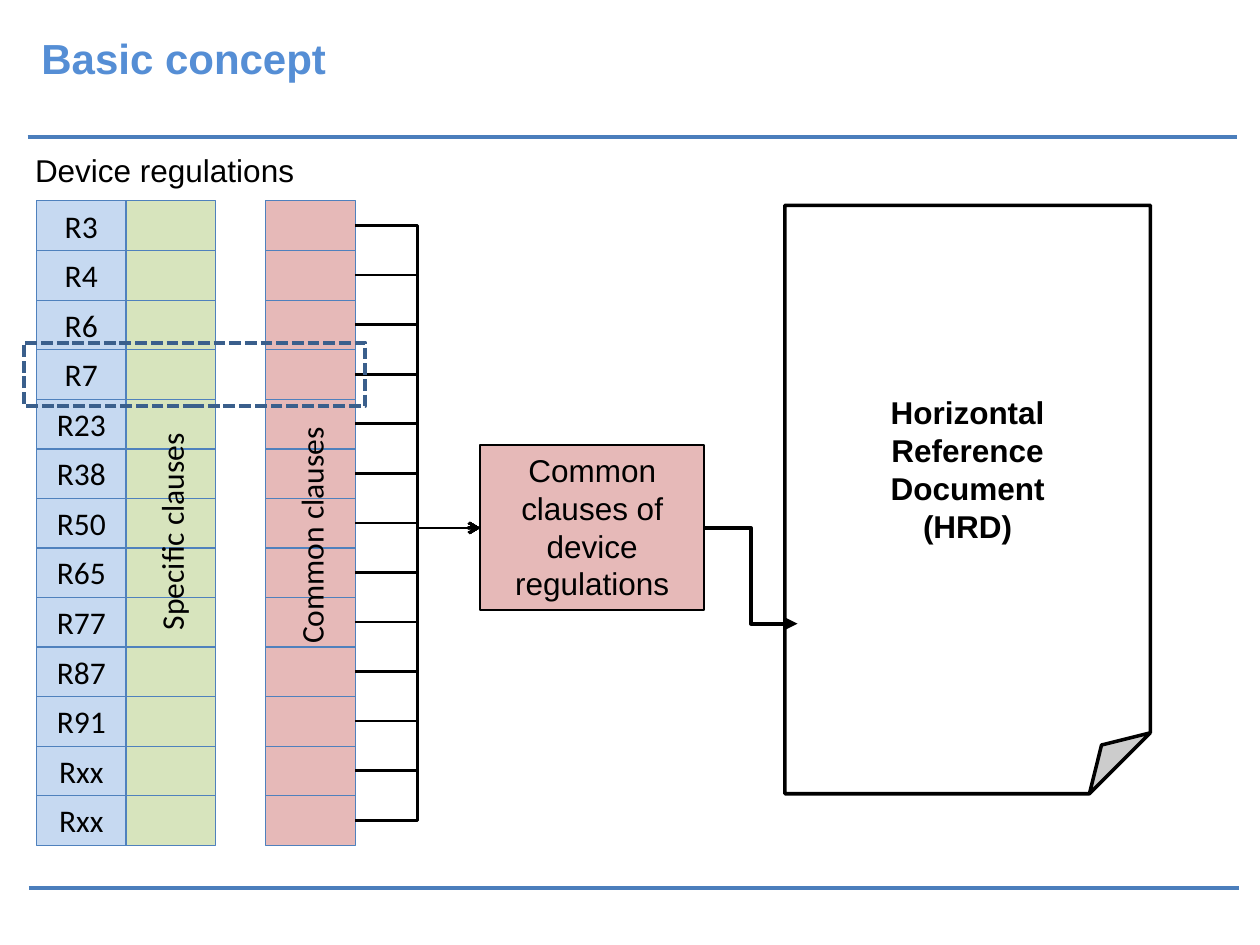
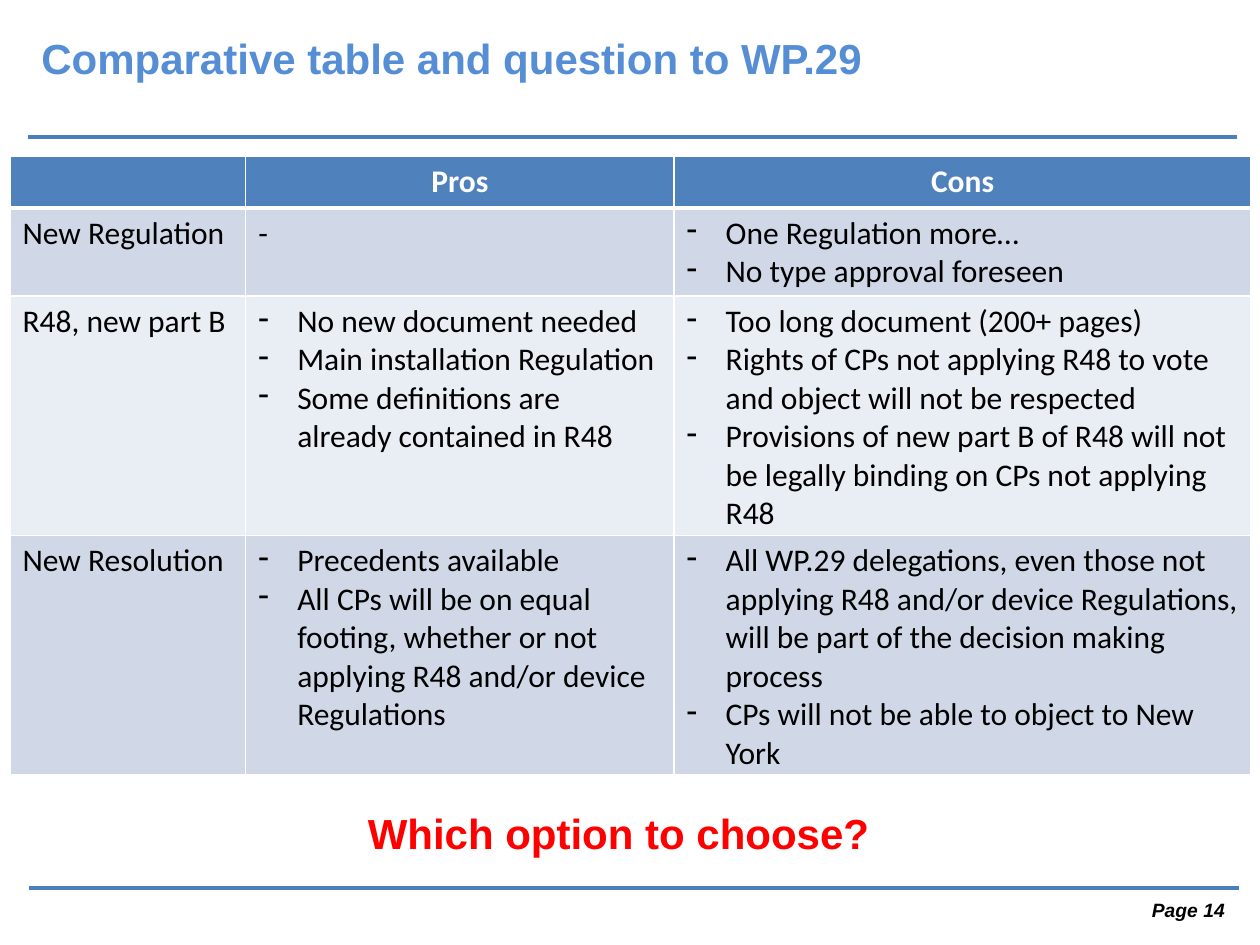
from lxml import etree
from pptx import Presentation
from pptx.dml.color import RGBColor
from pptx.enum.dml import MSO_LINE
from pptx.enum.shapes import MSO_CONNECTOR, MSO_SHAPE
from pptx.enum.text import MSO_ANCHOR, PP_ALIGN
from pptx.oxml.ns import qn
from pptx.util import Inches, Pt

RECT, FOLDED = MSO_SHAPE.RECTANGLE, MSO_SHAPE.FOLDED_CORNER
STRAIGHT, ELBOW = MSO_CONNECTOR.STRAIGHT, MSO_CONNECTOR.ELBOW
TOP, MIDDLE = MSO_ANCHOR.TOP, MSO_ANCHOR.MIDDLE
LEFT, CENTER, RIGHT = PP_ALIGN.LEFT, PP_ALIGN.CENTER, PP_ALIGN.RIGHT
DASH = MSO_LINE.SQUARE_DOT

BLACK = RGBColor(0x00, 0x00, 0x00)
WHITE = RGBColor(0xFF, 0xFF, 0xFF)
RED = RGBColor(0xFF, 0x00, 0x00)
TITLE_BLUE = RGBColor(0x55, 0x8E, 0xD5)
RULE_BLUE = RGBColor(0x4B, 0x7E, 0xBC)
ACCENT = RGBColor(0x4F, 0x81, 0xBD)
DASH_BLUE = RGBColor(0x3A, 0x5F, 0x8C)
PALE_BLUE = RGBColor(0xC6, 0xD9, 0xF1)
PALE_GREEN = RGBColor(0xD7, 0xE4, 0xBD)
PALE_RED = RGBColor(0xE6, 0xB9, 0xB8)
BAND_DARK = RGBColor(0xD0, 0xD8, 0xE8)
BAND_LIGHT = RGBColor(0xE9, 0xED, 0xF4)

# Content
REGULATIONS = ["R3", "R4", "R6", "R7", "R23", "R38", "R50", "R65", "R77",
               "R87", "R91", "Rxx", "Rxx"]
# left edge, fill, cell texts
CLAUSE_COLUMNS = [
    (0.29, PALE_BLUE, REGULATIONS),
    (1.0, PALE_GREEN, [""] * len(REGULATIONS)),
    (2.11, PALE_RED, [""] * len(REGULATIONS)),
]
# text, left, top
VERTICAL_LABELS = [("Common clauses", 0.18, 4.05),
                   ("Specific clauses", -0.93, 4.02)]
HRD_LINES = ["Horizontal", "Reference", "Document", "(HRD)"]

# A list in a cell is bulleted, a string is plain
OPTIONS = [
    ("", "Pros", "Cons"),
    ("New Regulation", "-",
     ["One Regulation more…", "No type approval foreseen"]),
    ("R48, new part B",
     ["No new document needed",
      "Main installation Regulation",
      "Some definitions are already contained in R48"],
     ["Too long document (200+ pages)",
      "Rights of CPs not applying R48 to vote and object will not be respected",
      "Provisions of new part B of R48 will not be legally binding on CPs "
      "not applying R48"]),
    ("New Resolution",
     ["Precedents available",
      "All CPs will be on equal footing, whether or not applying R48 and/or "
      "device Regulations"],
     ["All WP.29 delegations, even those not applying R48 and/or device "
      "Regulations, will be part of the decision making process",
      "CPs will not be able to object to New York"]),
]
COLUMN_WIDTHS = [1.87, 3.4, 4.58]
ROW_HEIGHTS = [0.41, 0.69, 1.9, 1.9]

# Layout
CELL_W, CELL_H = 0.71, 0.4
ROWS_TOP, ROW_PITCH = 1.59, 4.72 / 12
COMMON_BOX = (3.81, 3.53, 1.78, 1.31)
COMMON_MID = 4.19


def write(tf, lines, size=18, font="Calibri", color=BLACK, bold=False,
          italic=False, align=LEFT):
    tf.word_wrap = True
    tf.text = "\n".join(lines)
    for p in tf.paragraphs:
        p.alignment = align
        for r in p.runs:
            r.font.size, r.font.name = Pt(size), font
            r.font.bold, r.font.italic = bold, italic
            r.font.color.rgb = color


def add_text(s, box, text, **style):
    sp = s.shapes.add_textbox(*map(Inches, box))
    write(sp.text_frame, [text], **style)
    return sp


def add_box(s, box, fill, line, width, kind=RECT):
    sp = s.shapes.add_shape(kind, *map(Inches, box))
    sp.shadow.inherit = False
    if fill is None:
        sp.fill.background()
    else:
        sp.fill.solid()
        sp.fill.fore_color.rgb = fill
    sp.line.color.rgb = line
    sp.line.width = Pt(width)
    sp.text_frame.vertical_anchor = TOP
    return sp


def add_line(s, start, end, color, width, kind=STRAIGHT, head=None):
    cx = s.shapes.add_connector(kind, *map(Inches, start + end))
    cx.line.color.rgb = color
    cx.line.width = Pt(width)
    if head:
        etree.SubElement(cx.line._get_or_add_ln(), qn("a:tailEnd"), type=head)
    etree.SubElement(cx._element.spPr, qn("a:effectLst"))


def add_slide(prs, title):
    """Blank slide with the shared rules and title."""
    s = prs.slides.add_slide(prs.slide_layouts[6])
    add_line(s, (0.22, 1.09), (9.82, 1.09), RULE_BLUE, 2.25)
    add_line(s, (0.23, 7.05), (9.83, 7.05), RULE_BLUE, 2.25)
    add_text(s, (0.23, 0.21, 9.6, 0.5), title, size=24, font="Arial",
             color=TITLE_BLUE, bold=True)
    return s


def add_bullet(p):
    pPr = p._p.get_or_add_pPr()
    pPr.set("marL", str(Inches(0.31)))
    pPr.set("indent", str(-Inches(0.31)))
    etree.SubElement(pPr, qn("a:buChar"), char="-")


def set_borders(cell, **widths):
    """White borders by side (L, R, T, B), in points; they precede the fill."""
    tcPr = cell._tc.get_or_add_tcPr()
    for i, side in enumerate("LRTB"):
        ln = etree.Element(qn("a:ln" + side), w=str(Pt(widths.get(side, 1))))
        fill = etree.SubElement(ln, qn("a:solidFill"))
        etree.SubElement(fill, qn("a:srgbClr"), val=str(WHITE))
        tcPr.insert(i, ln)


def build_concept(prs):
    s = add_slide(prs, "Basic concept")
    add_text(s, (0.18, 1.15, 4.24, 0.4), "Device regulations", font="Arial")

    row_tops = [ROWS_TOP + i * ROW_PITCH for i in range(len(REGULATIONS))]
    for left, fill, texts in CLAUSE_COLUMNS:
        for top, text in reversed(list(zip(row_tops, texts))):
            sp = add_box(s, (left, top, CELL_W, CELL_H), fill, ACCENT, 0.75)
            if text:
                write(sp.text_frame, [text], align=CENTER)
    for text, left, top in VERTICAL_LABELS:
        add_text(s, (left, top, 4.58, 0.4), text, align=CENTER).rotation = 270

    sp = add_box(s, COMMON_BOX, PALE_RED, BLACK, 1)
    write(sp.text_frame, ["Common clauses of device regulations"],
          font="Arial", align=CENTER)
    for top in row_tops:
        add_line(s, (2.82, top + CELL_H / 2), (COMMON_BOX[0], COMMON_MID),
                 BLACK, 1.5, ELBOW, "arrow")

    sp = add_box(s, (6.23, 1.63, 2.9, 4.67), WHITE, BLACK, 2, FOLDED)
    sp.text_frame.vertical_anchor = MIDDLE
    write(sp.text_frame, HRD_LINES, font="Arial", bold=True, align=CENTER)
    add_line(s, (5.59, COMMON_MID), (6.33, 4.95), BLACK, 2.25, ELBOW,
             "triangle")

    highlight = add_box(s, (0.19, 2.72, 2.71, 0.5), None, DASH_BLUE, 2.25)
    highlight.line.dash_style = DASH


def build_comparison(prs):
    s = add_slide(prs, "Comparative table and question to WP.29")
    add_text(s, (7.49, 7.08, 2.33, 0.29), "Page 14", size=11, font="Arial",
             bold=True, italic=True, align=RIGHT)

    frame = s.shapes.add_table(
        len(OPTIONS), len(COLUMN_WIDTHS), Inches(0.08), Inches(1.24),
        Inches(sum(COLUMN_WIDTHS)), Inches(sum(ROW_HEIGHTS)))
    table = frame.table
    for column, width in zip(table.columns, COLUMN_WIDTHS):
        column.width = Inches(width)
    for row, height in zip(table.rows, ROW_HEIGHTS):
        row.height = Inches(height)

    for i, texts in enumerate(OPTIONS):
        header = i == 0
        band = ACCENT if header else BAND_DARK if i % 2 else BAND_LIGHT
        for cell, text in zip(table.rows[i].cells, texts):
            bulleted = isinstance(text, list)
            write(cell.text_frame, text if bulleted else [text],
                  color=WHITE if header else BLACK, bold=header,
                  align=CENTER if header else LEFT)
            if bulleted:
                for p in cell.text_frame.paragraphs:
                    add_bullet(p)
            cell.fill.solid()
            cell.fill.fore_color.rgb = band
            set_borders(cell, B=3 if header else 1, T=3 if i == 1 else 1)

    add_text(s, (0.11, 6.36, 9.6, 0.5), "Which option to choose?", size=24,
             font="Arial", color=RED, bold=True, align=CENTER)


def main():
    prs = Presentation()
    prs.slide_width, prs.slide_height = Inches(10), Inches(7.5)
    build_concept(prs)
    build_comparison(prs)
    prs.save("out.pptx")


if __name__ == "__main__":
    main()
